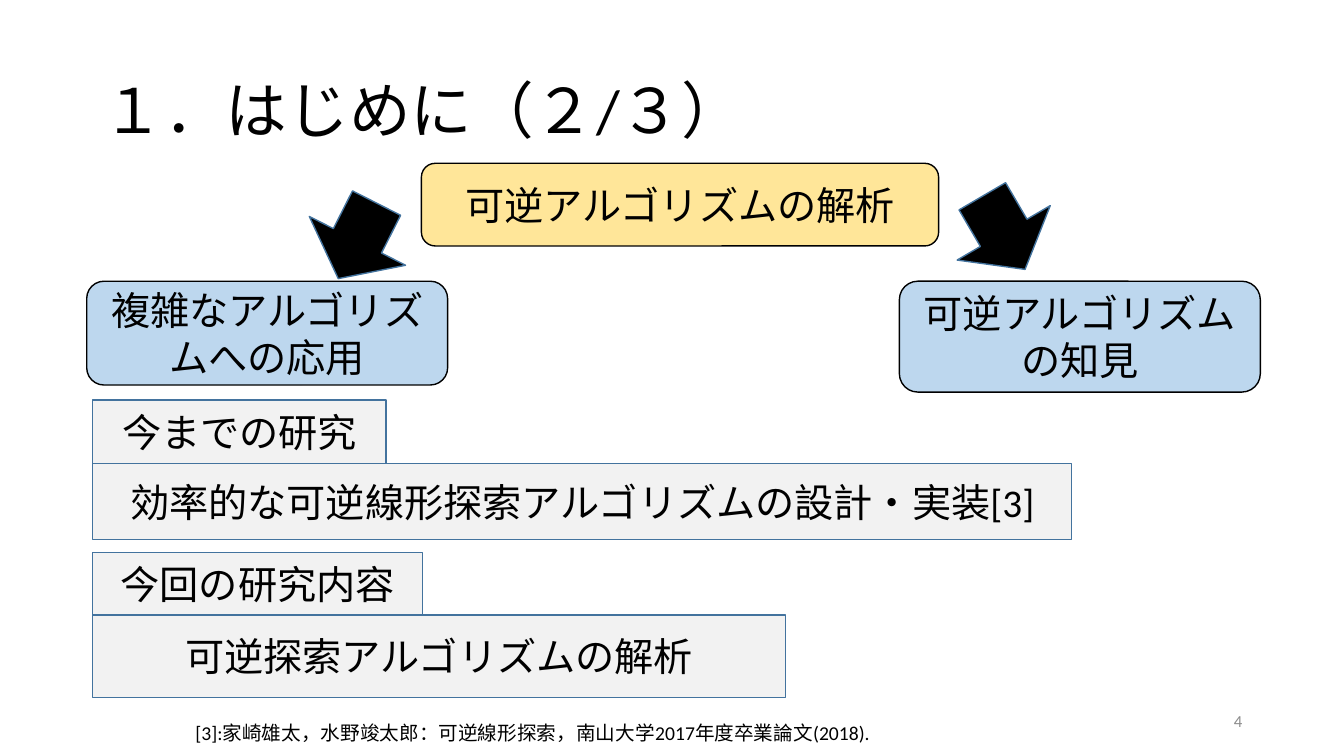
from pptx import Presentation
from pptx.dml.color import RGBColor
from pptx.enum.shapes import MSO_SHAPE
from pptx.enum.text import MSO_ANCHOR, PP_ALIGN
from pptx.util import Emu, Pt

EMU_PER_PX = 9144
BLACK = RGBColor(0x00, 0x00, 0x00)
GRAY = RGBColor(0x8C, 0x8C, 0x8C)
PALE_GRAY = RGBColor(0xF2, 0xF2, 0xF2)
YELLOW = RGBColor(0xFF, 0xE6, 0x99)
PALE_BLUE = RGBColor(0xBD, 0xD7, 0xEE)
STEEL_BLUE = RGBColor(0x43, 0x73, 0x9E)

RECTANGLE = MSO_SHAPE.RECTANGLE
ROUNDED = MSO_SHAPE.ROUNDED_RECTANGLE
DOWN_ARROW = MSO_SHAPE.DOWN_ARROW
LEFT, CENTER, RIGHT = PP_ALIGN.LEFT, PP_ALIGN.CENTER, PP_ALIGN.RIGHT
TOP, MIDDLE = MSO_ANCHOR.TOP, MSO_ANCHOR.MIDDLE


def px(*lengths):
    return [Emu(length * EMU_PER_PX) for length in lengths]


def write(shape, text, size=28, color=BLACK, font="Calibri",
          align=LEFT, anchor=MIDDLE, spacing=None):
    frame = shape.text_frame
    frame.word_wrap = True
    frame.vertical_anchor = anchor
    para = frame.paragraphs[0]
    para.alignment = align
    if spacing:
        para.line_spacing = spacing
    span = para.add_run()
    span.text = text
    span.font.name = font
    span.font.size = Pt(size)
    span.font.color.rgb = color


class SlideBuilder:
    def __init__(self, page):
        self.page = page
        self.line_width = Pt(1)

    def label(self, area, text, **style):
        box = self.page.shapes.add_textbox(*px(*area))
        write(box, text, **style)

    def shape(self, kind, area, fill, line):
        shape = self.page.shapes.add_shape(kind, *px(*area))
        shape.shadow.inherit = False
        shape.fill.solid()
        shape.fill.fore_color.rgb = fill
        shape.line.color.rgb = line
        shape.line.width = self.line_width
        return shape

    def topic(self, area, text, fill):
        write(self.shape(ROUNDED, area, fill, BLACK), text, align=CENTER)

    def panel(self, area, text):
        write(self.shape(RECTANGLE, area, PALE_GRAY, STEEL_BLUE), text, align=CENTER)

    def arrow(self, left, top, angle):
        arrow = self.shape(DOWN_ARROW, (left, top, 107, 84), BLACK, STEEL_BLUE)
        arrow.rotation = angle


def main():
    deck = Presentation()
    deck.slide_width, deck.slide_height = px(1333, 750)
    builder = SlideBuilder(deck.slides.add_slide(deck.slide_layouts[6]))

    builder.label((92, 40, 1150, 145), "１．はじめに（２/３）", size=44, spacing=0.9)
    builder.label((942, 695, 300, 40), "4", size=12, color=GRAY, align=RIGHT)

    builder.topic((418, 162, 513, 82), "可逆アルゴリズムの解析", YELLOW)
    builder.topic((86, 279, 358, 103), "複雑なアルゴリズムへの応用", PALE_BLUE)
    builder.arrow(301, 197, 26.9)
    builder.topic((892, 279, 358, 110), "可逆アルゴリズムの知見", PALE_BLUE)
    builder.arrow(942, 189, 329.7)

    panels = [
        (397, 291, 63, "今までの研究"),
        (460, 971, 75, "効率的な可逆線形探索アルゴリズムの設計・実装[3]"),
        (548, 327, 63, "今回の研究内容"),
        (610, 687, 82, "可逆探索アルゴリズムの解析"),
    ]
    for top, width, height, text in panels:
        builder.panel((92, top, width, height), text)

    builder.label(
        (184, 710, 983, 34),
        "[3]:家崎雄太，水野竣太郎：可逆線形探索，南山大学2017年度卒業論文(2018).",
        size=14, anchor=TOP)

    deck.save("out.pptx")


if __name__ == "__main__":
    main()
